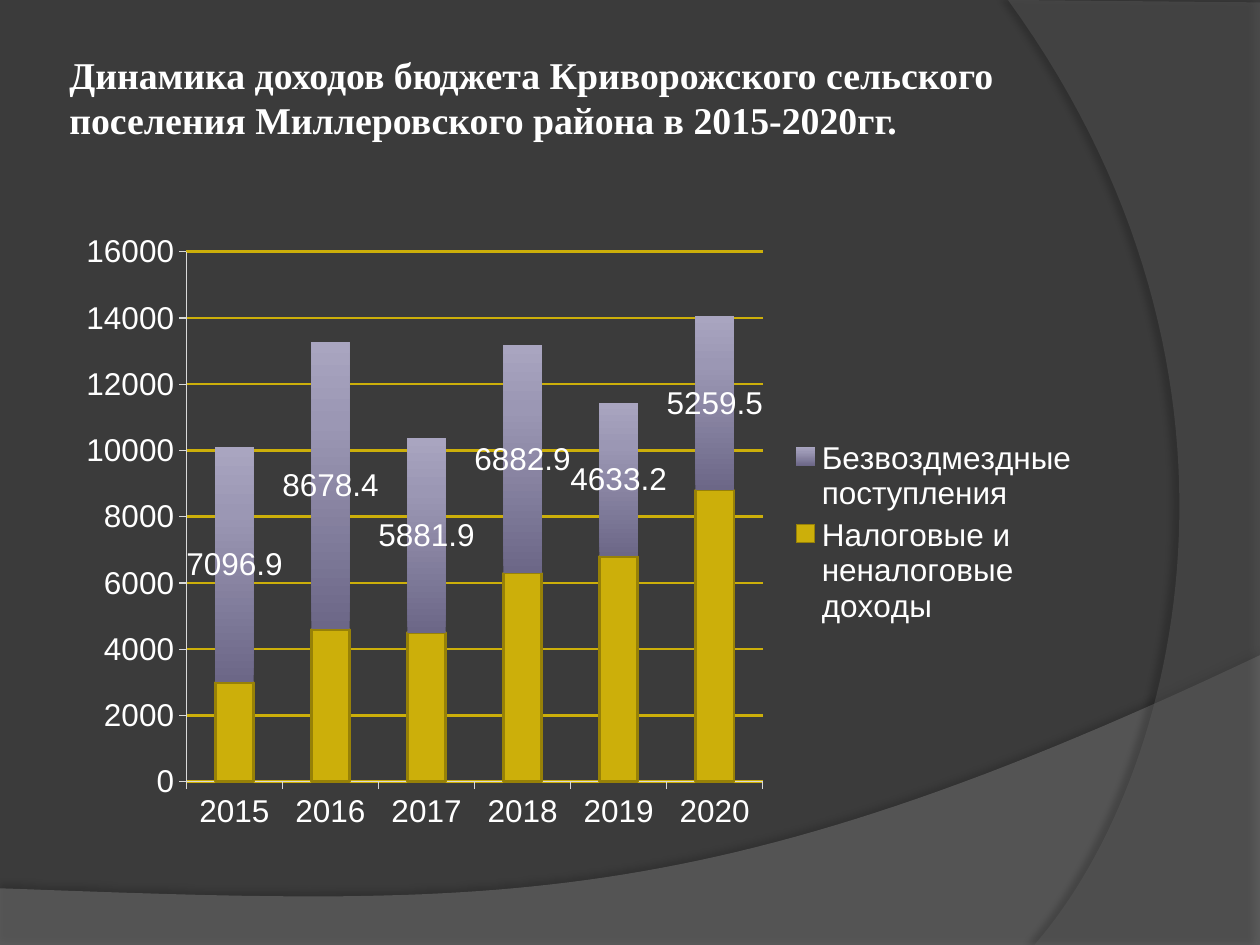
from lxml import etree
from pptx import Presentation
from pptx import util as u
from pptx.chart import data
from pptx.dml import color
from pptx.enum import chart as charts, text
from pptx.oxml import ns, parse_xml

Pt = u.Pt
YEARS = ["2015", "2016", "2017", "2018", "2019", "2020"]
TAXES = [3000, 4600, 4500, 6300, 6800, 8800]
TRANSFERS = [7096.9, 8678.4, 5881.9, 6882.9, 4633.2, 5259.5]


def rgb(value):
    return color.RGBColor.from_string(value)


def fragment(tag, body=""):
    return parse_xml(f'<{tag} {ns.nsdecls("a", "c")}>{body}</{tag.split()[0]}>')


def curve(start, first, second, end, steps=60):
    """Points along a cubic Bezier curve, without its start."""
    points = []
    for step in range(1, steps + 1):
        t = step / steps
        weights = ((1 - t) ** 3, 3 * t * (1 - t) ** 2, 3 * t * t * (1 - t), t ** 3)
        points.append(tuple(
            sum(w * p[axis] for w, p in zip(weights, (start, first, second, end)))
            for axis in (0, 1)))
    return points


class Slide:
    """The slide being built and its shared style."""
    title_font = "Times New Roman"
    chart_font = "Arial"
    ink = "FFFFFF"
    gold = "CCAF0A"
    gold_edge = "978107"
    axis_line = "D9D9D9"
    lilac = [(0, "6C6787"), (72, "9B97B4"), (100, "A9A5C0")]

    def __init__(self, deck, background):
        self.page = deck.slides.add_slide(deck.slide_layouts[6])
        fill = self.page.background.fill
        fill.solid()
        fill.fore_color.rgb = rgb(background)

    def swoosh(self, points, fill, opacity, shadow):
        """Translucent outline; shadow is opacity, blur, distance, direction."""
        scale = 100
        corners = [(round(x * scale), round(y * scale)) for x, y in points]
        builder = self.page.shapes.build_freeform(*corners[0], scale=Pt(1) / scale)
        builder.add_line_segments(corners[1:], close=True)
        shape = builder.convert_to_shape()
        shape.fill.solid()
        shape.fill.fore_color.rgb = rgb(fill)
        shape.line.fill.background()
        tint = shape._element.spPr.find(".//" + ns.qn("a:srgbClr"))
        etree.SubElement(tint, ns.qn("a:alpha"), val=str(opacity * 1000))
        strength, blur, distance, direction = shadow
        shape._element.spPr.append(fragment(
            "a:effectLst",
            f'<a:outerShdw blurRad="{Pt(blur)}" dist="{Pt(distance)}" '
            f'dir="{direction * 60000}" algn="ctr" rotWithShape="0">'
            f'<a:srgbClr val="000000"><a:alpha val="{strength * 1000}"/>'
            '</a:srgbClr></a:outerShdw>'))

    def title(self, words, left, top, width, height, size):
        box = self.page.shapes.add_textbox(Pt(left), Pt(top), Pt(width), Pt(height))
        frame = box.text_frame
        frame.word_wrap = True
        frame.vertical_anchor = text.MSO_ANCHOR.TOP
        frame.margin_left = frame.margin_right = Pt(3.6)
        frame.margin_top = Pt(8)
        para = frame.paragraphs[0]
        span = para.add_run()
        span.text = words
        span.font.name = self.title_font
        span.font.size = Pt(size)
        span.font.bold = True
        span.font.color.rgb = rgb(self.ink)

    def stacked_chart(self, left, top, width, height, categories, series, plot_area):
        numbers = data.CategoryChartData()
        numbers.categories = categories
        for name, values in series:
            numbers.add_series(name, values)
        chart = self.page.shapes.add_chart(
            charts.XL_CHART_TYPE.COLUMN_STACKED,
            Pt(left), Pt(top), Pt(width), Pt(height), numbers).chart
        self.style_font(chart.font)
        chart.has_title = False
        chart.has_legend = True
        chart.legend.position = charts.XL_LEGEND_POSITION.RIGHT
        chart.legend.include_in_layout = False
        self.style_font(chart.legend.font)
        plot = chart.plots[0]
        plot.gap_width, plot.overlap = 150, 100
        plot.vary_by_categories = False
        self.style_axes(chart)
        self.style_series(*plot.series)
        self.place_plot(chart, plot_area)

    def style_font(self, font):
        font.name = self.chart_font
        font.size = Pt(18)
        font.color.rgb = rgb(self.ink)

    def style_line(self, line, shade, width):
        line.color.rgb = rgb(shade)
        line.width = Pt(width)

    def style_axes(self, chart):
        for axis in (chart.category_axis, chart.value_axis):
            axis.major_tick_mark = charts.XL_TICK_MARK.OUTSIDE
            axis.minor_tick_mark = charts.XL_TICK_MARK.NONE
            self.style_line(axis.format.line, self.axis_line, 0.75)
            self.style_font(axis.tick_labels.font)
        scale = chart.value_axis
        scale.minimum_scale, scale.maximum_scale, scale.major_unit = 0, 16000, 2000
        scale.has_major_gridlines = True
        self.style_line(scale.major_gridlines.format.line, self.gold, 1.5)

    def style_series(self, taxes, transfers):
        taxes.format.fill.solid()
        taxes.format.fill.fore_color.rgb = rgb(self.gold)
        self.style_line(taxes.format.line, self.gold_edge, 1.5)
        transfers.format.line.fill.background()
        stops = "".join(f'<a:gs pos="{place * 1000}"><a:srgbClr val="{shade}"/></a:gs>'
                        for place, shade in self.lilac)
        transfers._element.find(ns.qn("c:spPr")).insert(0, fragment(
            "a:gradFill", f'<a:gsLst>{stops}</a:gsLst><a:lin ang="16200000" scaled="0"/>'))
        labels = transfers.data_labels
        labels.show_value = True
        labels.position = charts.XL_LABEL_POSITION.CENTER
        self.style_font(labels.font)

    def place_plot(self, chart, area):
        """Fix the inner plot area as fractions of the chart."""
        plot_area = chart._chartSpace.chart.plotArea
        for layout in plot_area.findall(ns.qn("c:layout")):
            plot_area.remove(layout)
        modes = '<c:layoutTarget val="inner"/><c:xMode val="edge"/><c:yMode val="edge"/>'
        sizes = "".join(f'<c:{key} val="{value}"/>' for key, value in zip("xywh", area))
        plot_area.insert(0, fragment(
            "c:layout", f"<c:manualLayout>{modes}{sizes}</c:manualLayout>"))


def main():
    deck = Presentation()
    deck.slide_width, deck.slide_height = Pt(720), Pt(540)
    slide = Slide(deck, "3B3B3B")
    wave = [(0, 507.6), (0, 540.7), (720, 540.7), (720, 374.4)]
    wave += curve(wave[-1], (402.5, 524.9), (281.5, 517.7), wave[0])
    slide.swoosh(wave, "7F7F7F", 45, (35, 4, 3.5, 270))
    arc = [(720, 1.4), (720, 540), (591.1, 540)]
    arc += curve(arc[-1], (673.2, 445.7), (733, 216), (576, 0))
    slide.swoosh(arc, "5E5E5E", 40, (45, 4, 4, 180))
    slide.title("Динамика доходов бюджета Криворожского сельского "
                "поселения Миллеровского района в 2015-2020гг.",
                36, 21.6, 588, 90, 21.6)
    slide.stacked_chart(
        36, 126, 588, 356.4, YEARS,
        [("Налоговые и неналоговые доходы", TAXES),
         ("Безвоздмездные поступления", TRANSFERS)],
        (0.12, 0.05, 0.56, 0.85))
    deck.save("out.pptx")


if __name__ == "__main__":
    main()
